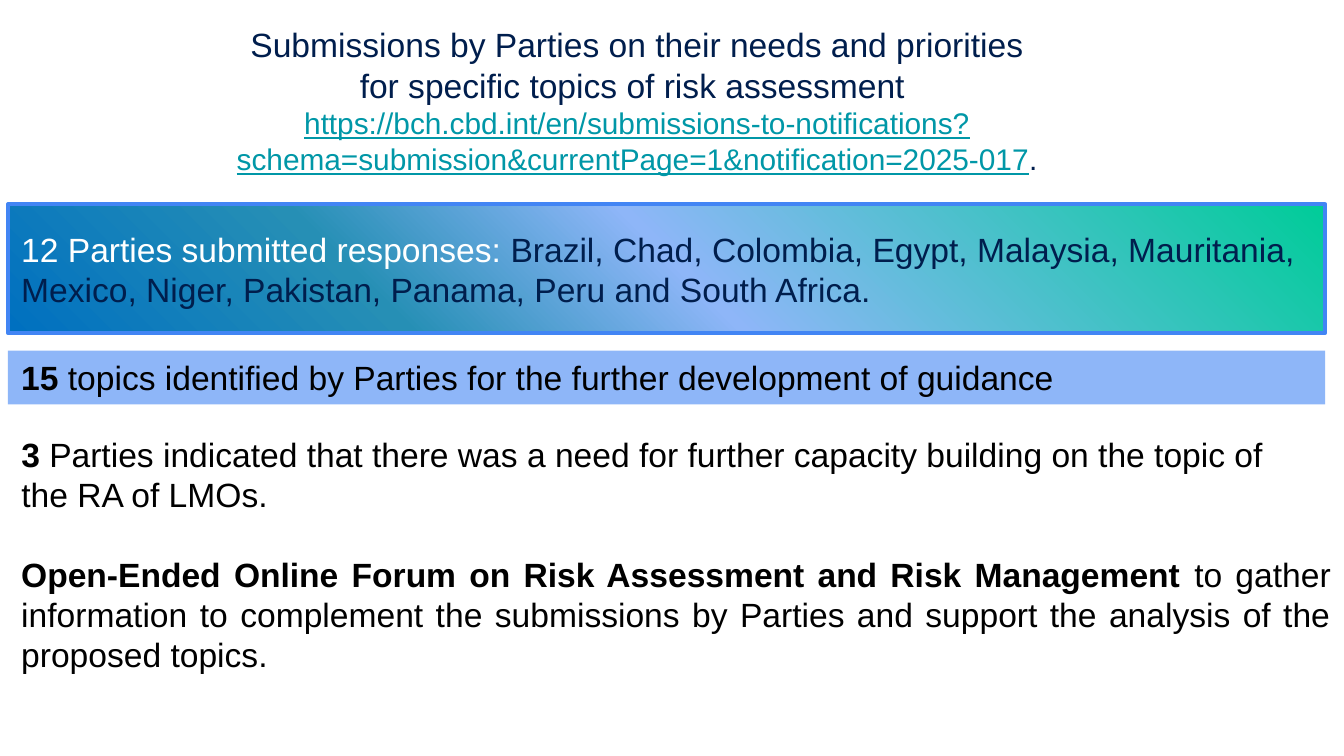
from lxml import etree
from pptx import Presentation
from pptx.dml.color import RGBColor
from pptx.enum.shapes import MSO_SHAPE
from pptx.enum.text import MSO_ANCHOR, MSO_AUTO_SIZE, PP_ALIGN
from pptx.oxml import parse_xml
from pptx.oxml.ns import nsdecls, qn
from pptx.util import Inches, Pt

NAVY, TEAL, BLACK, WHITE = "001E4D", "0097A7", "000000", "FFFFFF"
LIGHT_BLUE = "8EB6F8"


def rgb(color):
    return RGBColor.from_string(color)


def add_paragraph(tf, runs, align=PP_ALIGN.LEFT, size=18):
    """Add a paragraph of (text, colour, bold, underline) runs."""
    p = tf.paragraphs[0] if not tf.text else tf.add_paragraph()
    p.alignment = align
    p.font.size, p.font.name = Pt(size), "Arial"
    for text, color, bold, underline in runs:
        r = p.add_run()
        r.text = text
        r.font.color.rgb = rgb(color)
        r.font.bold, r.font.underline = bold, underline
    return p


# Widescreen slide, 16:9
prs = Presentation()
prs.slide_width = Inches(10)
prs.slide_height = Inches(10) * 9 // 16
s = prs.slides.add_slide(prs.slide_layouts[5])

# Title with the web address
title = s.shapes.title
title.left, title.top = Inches(0), Inches(0.08)
title.width, title.height = Inches(9.48), Inches(0.96)
tf = title.text_frame
tf.word_wrap, tf.auto_size = True, MSO_AUTO_SIZE.NONE
tf.vertical_anchor = MSO_ANCHOR.TOP
tf.margin_left = tf.margin_right = tf.margin_top = tf.margin_bottom = Inches(0.1)
for line in ("Submissions by Parties on their needs and priorities",
             "for specific topics of risk assessment "):
    add_paragraph(tf, [(line, NAVY, False, False)], PP_ALIGN.CENTER)
url = ("https://bch.cbd.int/en/submissions-to-notifications"
       "?schema=submission&currentPage=1&notification=2025-017")
add_paragraph(tf, [(url, TEAL, False, True), (".", NAVY, False, False)],
              PP_ALIGN.CENTER, 16)

# Statements: top, width, height, fill, lead, lead colour, lead bold, rest, rest colour
statements = [
    (1.52, 9.8, 0.96, None, "12 Parties submitted responses: ", WHITE, False,
     "Brazil, Chad, Colombia, Egypt, Malaysia, Mauritania, Mexico, Niger, "
     "Pakistan, Panama, Peru and South Africa.", NAVY),
    (2.61, 9.8, 0.4, LIGHT_BLUE, "15", BLACK, True,
     " topics identified by Parties for the further development of guidance", BLACK),
    (3.18, 9.71, 0.71, WHITE, "3", BLACK, True,
     " Parties indicated that there was a need for further capacity building "
     "on the topic of the RA of LMOs.", BLACK),
]
boxes = []
for top, width, height, fill, lead, lead_color, bold, rest, rest_color in statements:
    sp = s.shapes.add_shape(MSO_SHAPE.RECTANGLE, Inches(0.06), Inches(top),
                            Inches(width), Inches(height))
    sp.shadow.inherit = False
    sp.line.fill.background()
    if fill:
        sp.fill.solid()
        sp.fill.fore_color.rgb = rgb(fill)
    tf = sp.text_frame
    tf.word_wrap = True
    tf.vertical_anchor = MSO_ANCHOR.TOP if fill else MSO_ANCHOR.MIDDLE
    add_paragraph(tf, [(lead, lead_color, bold, False), (rest, rest_color, False, False)])
    boxes.append(sp)

# Gradient and outline of the responses box
responses = boxes[0]
responses.line.color.rgb = rgb("4285F4")
responses.line.width = Pt(2)
responses.fill.gradient()
responses.fill.gradient_angle = 225  # counter-clockwise: top right to bottom left
stops = responses.element.spPr.find(qn("a:gradFill")).find(qn("a:gsLst"))
for stop in list(stops):
    stops.remove(stop)
for percent, color in ((0, "00CC99"), (49, LIGHT_BLUE), (72, "268FB5"), (100, "0070C0")):
    stop = etree.SubElement(stops, qn("a:gs"), pos=str(percent * 1000))
    stop.append(parse_xml(f'<a:srgbClr {nsdecls("a")} val="{color}"/>'))

# Online forum
forum = s.shapes.add_textbox(Inches(0.06), Inches(4.07), Inches(9.94), Inches(1.01))
tf = forum.text_frame
tf.word_wrap = True
p = add_paragraph(tf, [
    ("Open-Ended Online Forum on Risk Assessment and Risk Management ", BLACK, True, False),
    ("to gather information to complement the submissions by Parties and support "
     "the analysis of the proposed topics.", BLACK, False, False),
], PP_ALIGN.JUSTIFY)
p.space_after = Pt(6)

prs.save("out.pptx")
